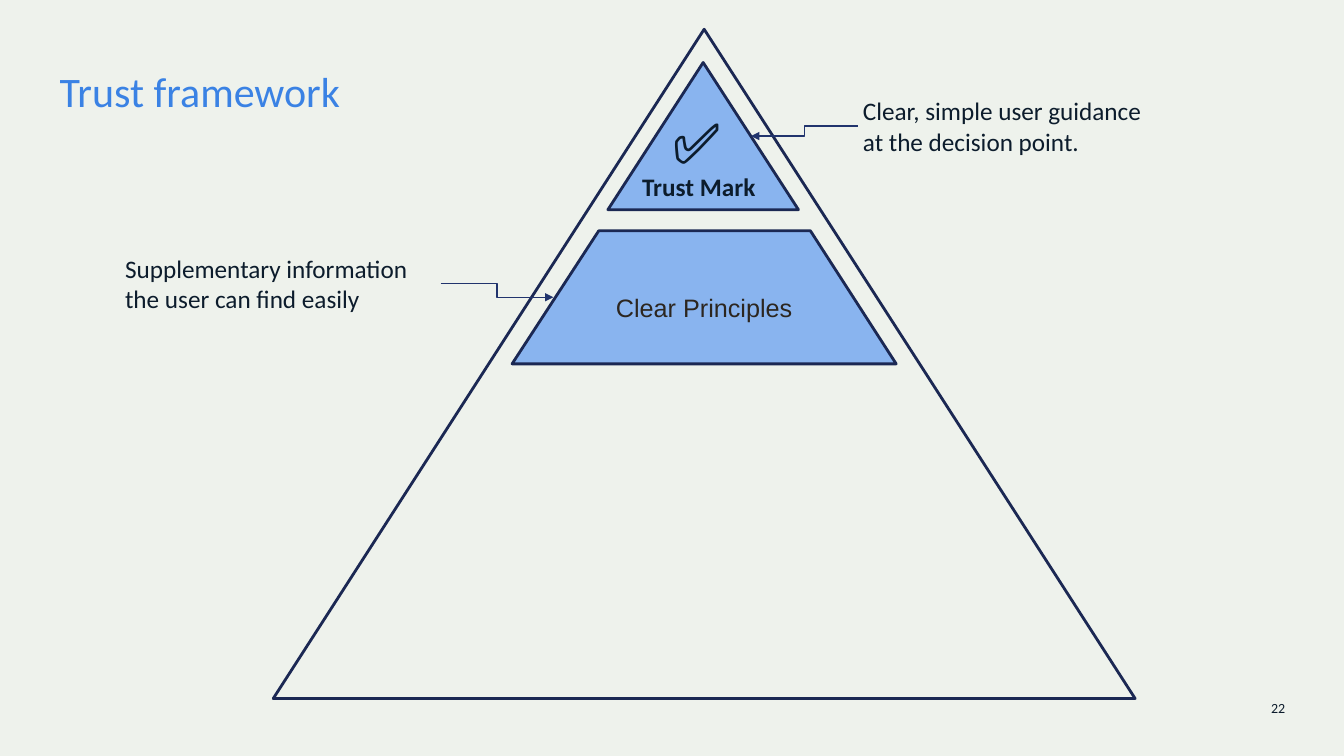
from pptx import Presentation
from pptx.dml.color import RGBColor
from pptx.enum.shapes import MSO_CONNECTOR, MSO_SHAPE
from pptx.enum.text import MSO_ANCHOR, PP_ALIGN
from pptx.oxml.ns import qn
from pptx.util import Inches, Pt
from lxml import etree

BACKGROUND = RGBColor(0xEE, 0xF2, 0xEC)
TITLE_BLUE = RGBColor(0x3A, 0x82, 0xE4)
INK = RGBColor(0x0C, 0x1C, 0x2C)
BROWN_INK = RGBColor(0x2C, 0x26, 0x20)
NAVY = RGBColor(0x1B, 0x28, 0x53)
ARROW_NAVY = RGBColor(0x21, 0x34, 0x6D)
TIER_BLUE = RGBColor(0x89, 0xB4, 0xEF)

TRIANGLE = MSO_SHAPE.ISOSCELES_TRIANGLE
ELBOW = MSO_CONNECTOR.ELBOW
TOP, MIDDLE = MSO_ANCHOR.TOP, MSO_ANCHOR.MIDDLE
LEFT, CENTER, RIGHT = PP_ALIGN.LEFT, PP_ALIGN.CENTER, PP_ALIGN.RIGHT


class PyramidSlide:
    """Places elements by percent of the slide's width and height."""

    def __init__(self, prs):
        self.width, self.height = prs.slide_width, prs.slide_height
        self.slide = prs.slides.add_slide(prs.slide_layouts[6])
        self.shapes = self.slide.shapes
        fill = self.slide.background.fill
        fill.solid()
        fill.fore_color.rgb = BACKGROUND

    def point(self, x, y):
        return round(self.width * x / 100), round(self.height * y / 100)

    def box(self, x, y, w, h):
        return *self.point(x, y), *self.point(w, h)

    def text(self, area, lines, size=18, color=INK, font="Calibri", bold=False,
             align=LEFT, anchor=TOP, inset=0.05, spacing=None):
        frame = self.shapes.add_textbox(*self.box(*area)).text_frame
        frame.word_wrap = True
        frame.vertical_anchor = anchor
        frame.margin_left = frame.margin_right = Inches(inset)
        frame.margin_top = frame.margin_bottom = Inches(inset)
        for number, line in enumerate(lines):
            paragraph = frame.add_paragraph() if number else frame.paragraphs[0]
            paragraph.alignment = align
            if spacing:
                paragraph.line_spacing = spacing
            run = paragraph.add_run()
            run.text = line
            run.font.size = Pt(size)
            run.font.name = font
            run.font.bold = bold
            run.font.color.rgb = color

    def outline(self, shape, fill=None):
        shape.shadow.inherit = False
        if fill is None:
            shape.fill.background()
        else:
            shape.fill.solid()
            shape.fill.fore_color.rgb = fill
        shape.line.color.rgb = NAVY
        shape.line.width = Pt(2)

    def triangle(self, area, fill=None):
        self.outline(self.shapes.add_shape(TRIANGLE, *self.box(*area)), fill)

    def polygon(self, corners, fill):
        start, *rest = [self.point(*corner) for corner in corners]
        builder = self.shapes.build_freeform(*start)
        builder.add_line_segments(rest, close=True)
        self.outline(builder.convert_to_shape(), fill)

    def arrow(self, start, end):
        arrow = self.shapes.add_connector(ELBOW, *self.point(*start), *self.point(*end))
        arrow.line.color.rgb = ARROW_NAVY
        arrow.line.width = Pt(1)
        etree.SubElement(arrow.line._get_or_add_ln(), qn("a:tailEnd"), type="triangle")
        etree.SubElement(arrow._element.spPr, qn("a:effectLst"))


def main():
    prs = Presentation()
    prs.slide_width, prs.slide_height = Inches(13.33), Inches(7.5)
    page = PyramidSlide(prs)

    # Title and page number
    page.text((4.43, 8.27, 91.2, 8.4), ["Trust framework"], size=30,
              color=TITLE_BLUE, inset=0, spacing=1.06)
    page.text((94.58, 92.53, 1.05, 2.27), ["22"], size=10, align=RIGHT, inset=0)

    # Whole pyramid
    page.triangle((20.33, 3.87, 64.13, 88.53))

    # Top tier: trust mark
    page.triangle((45.23, 8.27, 14.18, 19.47), TIER_BLUE)
    page.text((49.65, 13.6, 5.48, 11.2), ["✅"], size=40)
    page.text((47.4, 22, 10.35, 5.47), ["Trust Mark"], bold=True)

    # Second tier: principles
    page.polygon([(38.1, 48.13), (44.55, 30.53), (60.3, 30.53), (66.68, 48.13)], TIER_BLUE)
    page.text((42.38, 38, 20.03, 5.47), ["Clear Principles"], color=BROWN_INK,
              font="Arial", align=CENTER, anchor=MIDDLE)

    # Callouts with their arrows
    page.text((63.83, 12, 24.53, 9.47),
              ["Clear, simple user guidance", "at the decision point."])
    page.arrow((63.83, 16.67), (55.88, 18))
    page.text((8.93, 32.8, 23.78, 9.47),
              ["Supplementary information", "the user can find easily"])
    page.arrow((32.78, 37.47), (41.18, 39.33))

    prs.save("out.pptx")


if __name__ == "__main__":
    main()
